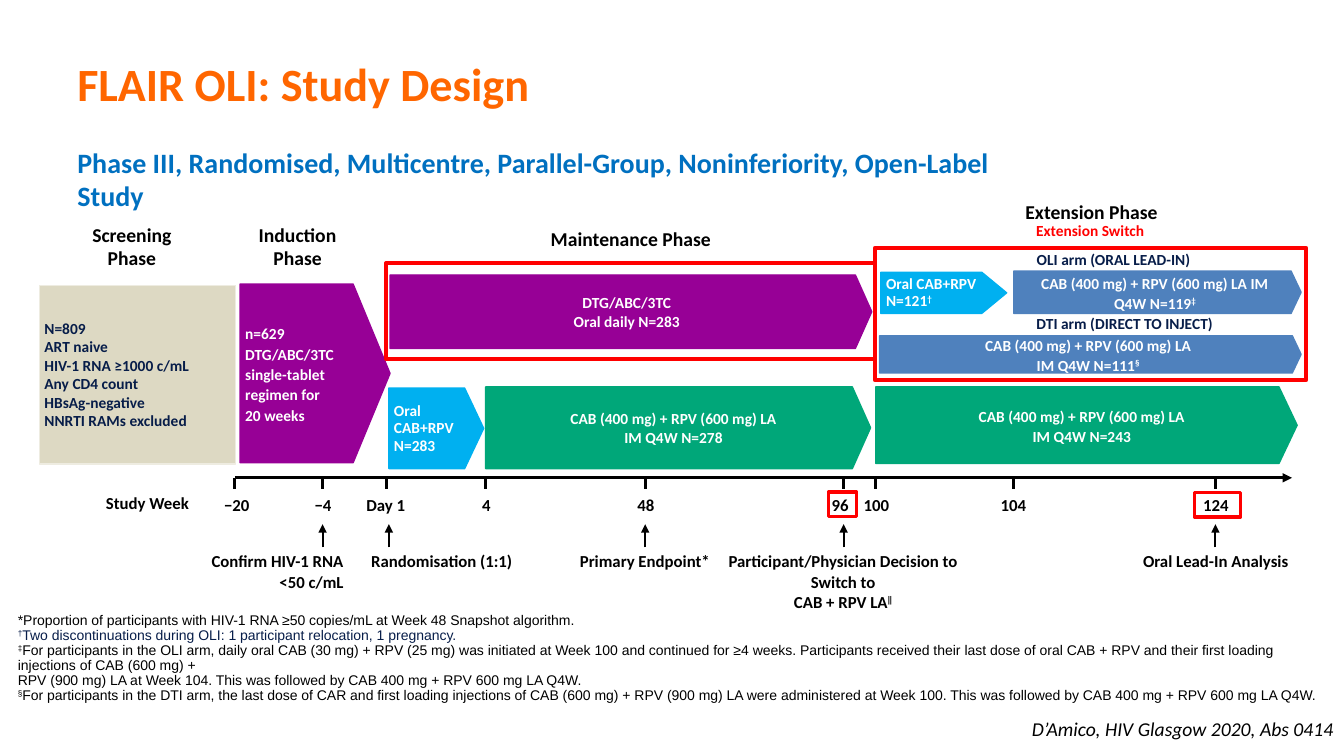
"""Build the FLAIR OLI study design slide."""
import pptx
import pptx.dml.color
import pptx.enum.shapes
import pptx.enum.text
import pptx.oxml
import pptx.oxml.ns
import pptx.util

Cm = pptx.util.Cm
Pt = pptx.util.Pt
RGBColor = pptx.dml.color.RGBColor
MSO_SHAPE = pptx.enum.shapes.MSO_SHAPE
ALIGN = pptx.enum.text.PP_ALIGN
ANCHOR = pptx.enum.text.MSO_ANCHOR

BLACK = RGBColor(0x00, 0x00, 0x00)
WHITE = RGBColor(0xFF, 0xFF, 0xFF)
NAVY = RGBColor(0x07, 0x1D, 0x49)
ORANGE = RGBColor(0xFF, 0x66, 0x00)
BLUE = RGBColor(0x00, 0x70, 0xC0)
RED = RGBColor(0xFF, 0x00, 0x00)
PURPLE = RGBColor(0x97, 0x00, 0x96)
GREEN = RGBColor(0x00, 0xA7, 0x79)
SKY = RGBColor(0x00, 0xB0, 0xF0)
STEEL = RGBColor(0x4F, 0x81, 0xBD)
SAND = RGBColor(0xDD, 0xD9, 0xC3)
CREAM = RGBColor(0xEE, 0xEC, 0xE1)


def write(frame, text, size=12, color=BLACK, font="Calibri", bold=True, italic=False,
          align=ALIGN.CENTER, anchor=ANCHOR.TOP, spacing=1.0, insets=(0, 0, 0, 0),
          wrap=True, paragraph_colors=None):
    """Fill a frame: newline parts paragraphs, vertical tab breaks lines, ^ marks superscript."""
    frame.word_wrap = wrap
    frame.vertical_anchor = anchor
    frame.margin_left, frame.margin_top, frame.margin_right, frame.margin_bottom = map(Cm, insets)
    for number, content in enumerate(text.split("\n")):
        paragraph = frame.add_paragraph() if number else frame.paragraphs[0]
        paragraph.alignment = align
        paragraph.line_spacing = spacing
        for row, line in enumerate(content.split("\v")):
            if row:
                paragraph.add_line_break()
            for piece, words in enumerate(line.split("^")):
                if not words:
                    continue
                run = paragraph.add_run()
                run.text = words
                run.font.name = font
                run.font.size = Pt(size)
                run.font.bold = bold
                run.font.italic = italic
                run.font.color.rgb = (paragraph_colors or {}).get(number, color)
                if piece % 2:
                    run.font._element.set("baseline", "30000")


class StudySlide:
    """Hold the slide and its style, with one method per kind of element."""

    padded = (0.25, 0.13, 0.25, 0.13)
    tight = (0.13, 0.13, 0.13, 0.13)

    def __init__(self, presentation):
        """Add a blank slide."""
        self.shapes = presentation.slides.add_slide(presentation.slide_layouts[6]).shapes

    def label(self, text, left, top, width, height=0.51, **style):
        """Add a text box."""
        box = self.shapes.add_textbox(Cm(left), Cm(top), Cm(width), Cm(height))
        write(box.text_frame, text, **style)

    def paint(self, shape, fill, line, weight=1):
        """Set fill and outline, without shadow."""
        shape.shadow.inherit = False
        if fill is None:
            shape.fill.background()
        else:
            shape.fill.solid()
            shape.fill.fore_color.rgb = fill
        shape.line.color.rgb = line
        shape.line.width = Pt(weight)

    def block(self, left, top, width, height, fill, line, weight=1, text="", **style):
        """Add a rectangle."""
        rectangle = self.shapes.add_shape(
            MSO_SHAPE.RECTANGLE, Cm(left), Cm(top), Cm(width), Cm(height))
        self.paint(rectangle, fill, line, weight)
        if text:
            write(rectangle.text_frame, text, size=11, anchor=ANCHOR.MIDDLE, **style)

    def phase(self, text, left, top, width, height, color, tip, **style):
        """Add a pentagon arrow for a treatment phase."""
        pentagon = self.shapes.add_shape(
            MSO_SHAPE.PENTAGON, Cm(left), Cm(top), Cm(width), Cm(height))
        pentagon.adjustments[0] = tip
        self.paint(pentagon, color, color)
        write(pentagon.text_frame, text, size=11, color=WHITE, anchor=ANCHOR.MIDDLE, **style)

    def lead_in(self, text, left, top, shoulder, tip, height):
        """Add an oral lead-in arrow whose text spans its full width."""
        builder = self.shapes.build_freeform(Cm(left), Cm(top))
        outline = [(shoulder, top), (tip, top + height / 2),
                   (shoulder, top + height), (left, top + height)]
        builder.add_line_segments([(Cm(x), Cm(y)) for x, y in outline])
        arrow = builder.convert_to_shape()
        self.paint(arrow, SKY, SKY)
        write(arrow.text_frame, text, size=11, color=WHITE, anchor=ANCHOR.MIDDLE,
              align=ALIGN.LEFT, spacing=0.95, insets=self.tight)

    def line(self, x1, y1, x2, y2, weight, arrow=False):
        """Add a straight black line."""
        connector = self.shapes.add_connector(
            pptx.enum.shapes.MSO_CONNECTOR.STRAIGHT, Cm(x1), Cm(y1), Cm(x2), Cm(y2))
        connector.line.color.rgb = BLACK
        connector.line.width = Pt(weight)
        if arrow:
            connector.line._get_or_add_ln().append(pptx.oxml.parse_xml(
                f'<a:tailEnd {pptx.oxml.ns.nsdecls("a")} type="triangle"/>'))
        connector._element.spPr.append(pptx.oxml.parse_xml(
            f'<a:effectLst {pptx.oxml.ns.nsdecls("a")}/>'))


def main():
    """Draw the slide and save it."""
    presentation = pptx.Presentation()
    presentation.slide_width, presentation.slide_height = Cm(33.87), Cm(19.05)
    slide = StudySlide(presentation)

    slide.label("FLAIR OLI: Study Design", 1.7, 0.03, 23.52, 4.11, size=33, color=ORANGE,
                align=ALIGN.LEFT, anchor=ANCHOR.MIDDLE, insets=slide.padded)
    slide.label("Phase III, Randomised, Multicentre, Parallel-Group, Noninferiority, "
                "Open-Label Study", 1.7, 3.53, 23.52, 1.96, size=20, color=BLUE,
                align=ALIGN.LEFT, insets=slide.padded)

    for heading, left, top, width in [
            ("Screening\nPhase", 1.57, 5.61, 3.51), ("Induction\nPhase", 5.72, 5.61, 3.56),
            ("Maintenance Phase", 13.87, 5.72, 4.06), ("Extension Phase", 25.58, 5.03, 3.86)]:
        slide.label(heading, left, top, width, 0.61, size=14)

    slide.block(0.99, 7.19, 4.95, 4.5, SAND, CREAM, color=NAVY, align=ALIGN.LEFT,
                insets=(0.13, 0.13, 0, 0.13),
                text="N=809\nART naive\nHIV-1 RNA ≥1000 c/mL\vAny CD4 count\n"
                     "HBsAg-negative\nNNRTI RAMs excluded")
    slide.phase("DTG/ABC/3TC\nOral daily N=283", 9.83, 6.93, 12.14, 1.85, PURPLE, 0.223,
                insets=slide.padded)
    slide.phase("n=629\nDTG/ABC/3TC\nsingle-tablet regimen for\v20 weeks",
                6.05, 7.16, 3.78, 4.5, PURPLE, 0.246, align=ALIGN.LEFT, spacing=1.1,
                insets=slide.tight)
    slide.phase("CAB (400 mg) + RPV (600 mg) LA\nIM Q4W N=278",
                12.24, 9.75, 9.7, 2.06, GREEN, 0.223, insets=(0, 0.13, 0, 0.13))
    for regimen, left, top, width, height, color in [
            ("LA\vIM Q4W N=243", 22.07, 9.75, 10.62, 1.93, GREEN),
            ("LA IM Q4W N=119^‡^", 25.55, 6.83, 7.24, 1.07, STEEL),
            ("LA\vIM Q4W N=111^§^", 22.17, 8.46, 10.62, 0.94, STEEL)]:
        slide.phase("CAB (400 mg) + RPV (600 mg) " + regimen, left, top, width, height,
                    color, 0.237, spacing=1.1, insets=slide.padded)
    slide.lead_in("Oral CAB+RPV N=283", 9.8, 9.78, 11.71, 12.19, 2.03)
    slide.lead_in("Oral CAB+RPV N=121^†^", 22.2, 6.86, 24.74, 25.37, 1.04)

    slide.line(5.92, 12.04, 32.56, 12.04, 2.25, arrow=True)
    slide.label("Study Week", 2.67, 12.42, 2.11, align=ALIGN.LEFT, wrap=False)
    for week, tick, center in [
            ("−20", 5.92, 5.97), ("−4", 8.13, 8.14), ("Day 1", 9.75, 9.72),
            ("4", 12.24, 12.26), ("48", 16.26, 16.28), ("96", 21.26, 21.17),
            ("100", 22.07, 22.09), ("104", 25.55, 25.54), ("124", 30.63, 30.64)]:
        slide.line(tick, 12.04, tick, 12.32, 2.25)
        slide.label(week, center - 0.6, 12.47, 1.2, wrap=False)

    for milestone, arrow, left, width, align in [
            ("Confirm HIV-1 RNA\v<50 c/mL", 8.13, 5.21, 3.45, ALIGN.RIGHT),
            ("Randomisation (1:1)", 9.8, 8.81, 4.65, ALIGN.CENTER),
            ("Primary Endpoint*", 16.26, 13.69, 5.13, ALIGN.CENTER),
            ("Participant/Physician Decision to Switch to\vCAB + RPV LA^ǁ^",
             21.26, 18.19, 6.12, ALIGN.CENTER),
            ("Oral Lead-In Analysis", 30.63, 28.24, 4.8, ALIGN.CENTER)]:
        slide.line(arrow, 13.79, arrow, 13.21, 1.5, arrow=True)
        slide.label(milestone, left, 13.89, width, align=align)

    for left, top, width, height, weight in [
            (30.1, 12.42, 1.17, 0.61, 2.25), (20.88, 12.4, 0.71, 0.61, 2.25),
            (22.05, 6.25, 10.87, 3.33, 3), (9.73, 6.63, 12.32, 2.41, 3)]:
        slide.block(left, top, width, height, None, RED, weight)

    for arm, left, top, width, color in [
            ("Extension Switch", 26.09, 5.56, 2.77, RED),
            ("OLI arm (ORAL LEAD-IN)", 26.11, 6.3, 3.91, NAVY),
            ("DTI arm (DIRECT TO INJECT)", 26.11, 7.92, 4.47, NAVY)]:
        slide.label(arm, left, top, width, 0.48, size=11, color=color, wrap=False)

    slide.label(
        "*Proportion of participants with HIV-1 RNA ≥50 copies/mL at Week 48 Snapshot algorithm.\n"
        "^†^Two discontinuations during OLI: 1 participant relocation, 1 pregnancy.\n"
        "^‡^For participants in the OLI arm, daily oral CAB (30 mg) + RPV (25 mg) was initiated at "
        "Week 100 and continued for ≥4 weeks. Participants received their last dose of oral CAB + "
        "RPV and their first loading injections of CAB (600 mg) +\v"
        "RPV (900 mg) LA at Week 104. This was followed by CAB 400 mg + RPV 600 mg LA Q4W.\n"
        "^§^For participants in the DTI arm, the last dose of CAR and first loading injections of "
        "CAB (600 mg) + RPV (900 mg) LA were administered at Week 100. This was followed by "
        "CAB 400 mg + RPV 600 mg LA Q4W.",
        0.2, 15.32, 33.66, 3.12, size=10, font="Arial", bold=False, align=ALIGN.LEFT,
        spacing=0.9, insets=(0.25, 0.13, 0.25, 0.1), paragraph_colors={1: NAVY})
    slide.label("D’Amico, HIV Glasgow 2020, Abs 0414", 25.53, 17.93, 8.33, 0.86, size=14,
                bold=False, italic=True, align=ALIGN.RIGHT, insets=slide.padded, wrap=False)
    presentation.save("out.pptx")


if __name__ == "__main__":
    main()
